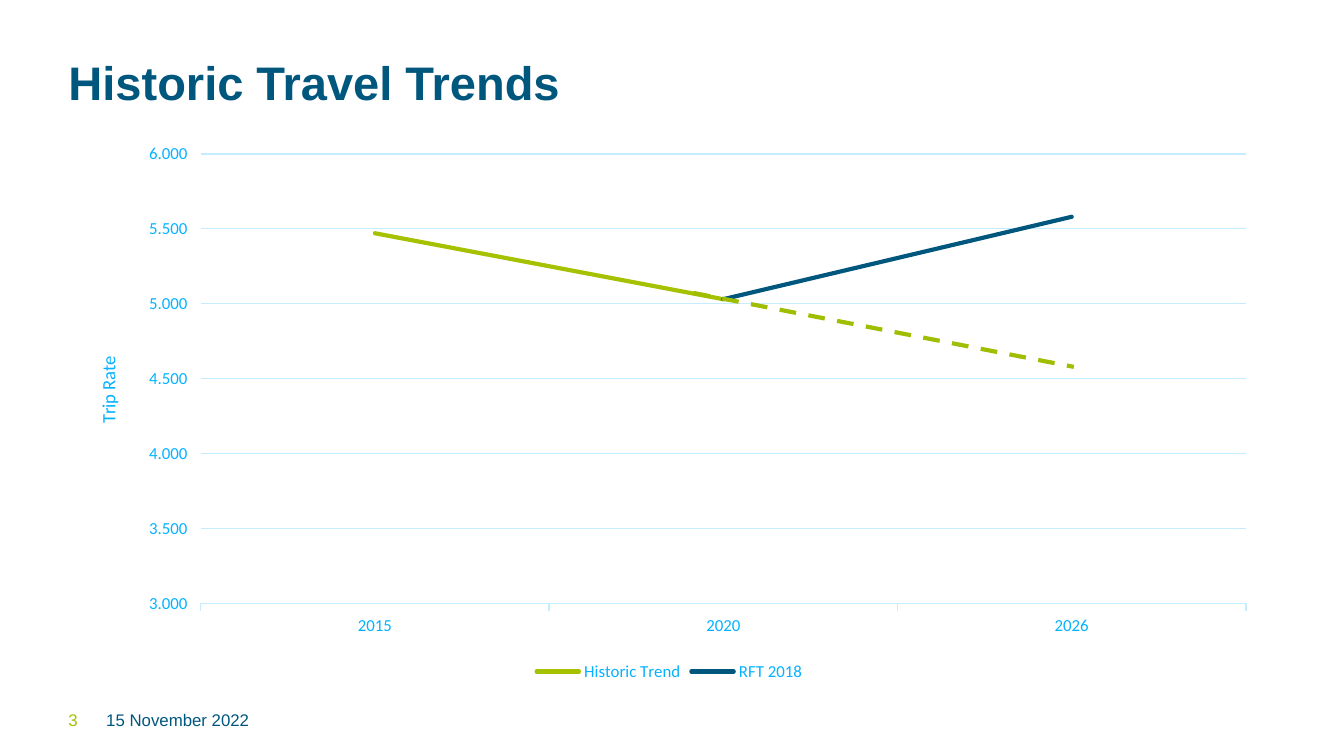
from dataclasses import dataclass

from lxml.etree import SubElement
from pptx import Presentation
from pptx.chart.chart import Chart
from pptx.chart.data import CategoryChartData
from pptx.dml.color import RGBColor
from pptx.enum.chart import XL_CHART_TYPE, XL_LEGEND_POSITION, XL_MARKER_STYLE, XL_TICK_MARK
from pptx.enum.dml import MSO_LINE
from pptx.enum.shapes import MSO_CONNECTOR
from pptx.enum.text import MSO_ANCHOR
from pptx.oxml import parse_xml
from pptx.oxml.ns import nsdecls, qn
from pptx.slide import Slide
from pptx.util import Inches, Pt

COLOURS = {
    "navy": "00577E",
    "lime": "A5C100",
    "projection": "A1BD00",
    "sky": "05B2FF",
    "grid": "C5EDFF",
}


@dataclass
class Label:
    text: str
    left: float
    top: float
    width: float
    height: float
    size: float
    colour: str
    bold: bool = False
    vertical_inset: float = 0


@dataclass
class Trend:
    name: str
    values: tuple
    colour: str


LABELS = [
    Label("Historic Travel Trends", 0.51, 0.38, 8.94, 0.45, 25.2, "navy", True, 0.05),
    Label("3", 0.51, 5.28, 0.2, 0.15, 9, "lime"),
    Label("15 November 2022", 0.79, 5.28, 4.72, 0.15, 9, "navy"),
]
YEARS = ("2015", "2020", "2026")
TRENDS = [
    Trend("Historic Trend", (5.47, 5.03, None), "lime"),
    Trend("RFT 2018", (None, 5.03, 5.58), "navy"),
]
PLOT_AREA = {"x": 0.11, "y": 0.04, "w": 0.87, "h": 0.81}


def rgb(colour: str) -> RGBColor:
    return RGBColor.from_string(COLOURS[colour])


def style_font(font, name: str, size: float, colour: str, bold: bool = False) -> None:
    font.name = name
    font.size = Pt(size)
    font.bold = bold
    font.color.rgb = rgb(colour)


def style_line(line, colour: str, width: float) -> None:
    line.color.rgb = rgb(colour)
    line.width = Pt(width)


def add_label(slide: Slide, label: Label) -> None:
    box = slide.shapes.add_textbox(
        Inches(label.left), Inches(label.top), Inches(label.width), Inches(label.height)
    )
    frame = box.text_frame
    frame.word_wrap = True
    frame.vertical_anchor = MSO_ANCHOR.MIDDLE
    frame.margin_left = frame.margin_right = 0
    frame.margin_top = frame.margin_bottom = Inches(label.vertical_inset)
    paragraph = frame.paragraphs[0]
    paragraph.text = label.text
    style_font(paragraph.font, "Arial", label.size, label.colour, label.bold)


def fix_plot_area(chart: Chart) -> None:
    """Place the inner plot area by fractions of the chart's size."""
    plot_area = chart.element.chart.plotArea
    for old_layout in plot_area.findall(qn("c:layout")):
        plot_area.remove(old_layout)
    layout = parse_xml(f"<c:layout {nsdecls('c')}><c:manualLayout/></c:layout>")
    manual = layout[0]
    settings = {"layoutTarget": "inner", "xMode": "edge", "yMode": "edge", **PLOT_AREA}
    for tag, value in settings.items():
        SubElement(manual, qn(f"c:{tag}")).set("val", str(value))
    plot_area.insert(0, layout)


def style_axes(chart: Chart) -> None:
    for axis in (chart.category_axis, chart.value_axis):
        style_font(axis.tick_labels.font, "Calibri", 9, "sky")
        axis.major_tick_mark = XL_TICK_MARK.OUTSIDE
    style_line(chart.category_axis.format.line, "grid", 0.75)

    value_axis = chart.value_axis
    value_axis.minimum_scale, value_axis.maximum_scale = 3, 6
    value_axis.major_unit = 0.5
    value_axis.tick_labels.number_format = "0.000"
    value_axis.tick_labels.number_format_is_linked = False
    value_axis.format.line.fill.background()
    style_line(value_axis.major_gridlines.format.line, "grid", 0.75)
    paragraph = value_axis.axis_title.text_frame.paragraphs[0]
    paragraph.text = "Trip Rate"
    style_font(paragraph.font, "Calibri", 10, "sky")


def add_trend_chart(slide: Slide) -> None:
    chart_data = CategoryChartData(number_format="0.000")
    chart_data.categories = YEARS
    for trend in TRENDS:
        chart_data.add_series(trend.name, trend.values)
    chart = slide.shapes.add_chart(
        XL_CHART_TYPE.LINE, Inches(0.51), Inches(0.98), Inches(8.94), Inches(4.13), chart_data
    ).chart
    style_font(chart.font, "Calibri", 10, "navy")
    chart.has_title = False
    chart.has_legend = True
    chart.legend.position = XL_LEGEND_POSITION.BOTTOM
    chart.legend.include_in_layout = False
    style_font(chart.legend.font, "Calibri", 9, "sky")
    chart.plots[0].vary_by_categories = False
    for series, trend in zip(chart.plots[0].series, TRENDS):
        series.smooth = False
        series.marker.style = XL_MARKER_STYLE.NONE
        style_line(series.format.line, trend.colour, 2.25)
        series.format.line.fill  # the outline now exists
        series._element.spPr.find(qn("a:ln")).set("cap", "rnd")
    style_axes(chart)
    fix_plot_area(chart)


def add_projection(slide: Slide) -> None:
    """Continue the historic trend to 2026 as a dashed line."""
    projection = slide.shapes.add_connector(
        MSO_CONNECTOR.STRAIGHT, Inches(5.16), Inches(2.18), Inches(7.99), Inches(2.73)
    )
    style_line(projection.line, "projection", 2.25)
    projection.line.dash_style = MSO_LINE.DASH
    SubElement(projection.element.spPr, qn("a:effectLst"))


def main() -> None:
    presentation = Presentation()
    presentation.slide_width = Inches(10)
    presentation.slide_height = Inches(5.625)
    slide = presentation.slides.add_slide(presentation.slide_layouts[6])
    for label in LABELS:
        add_label(slide, label)
    add_trend_chart(slide)
    add_projection(slide)
    presentation.save("out.pptx")


if __name__ == "__main__":
    main()
